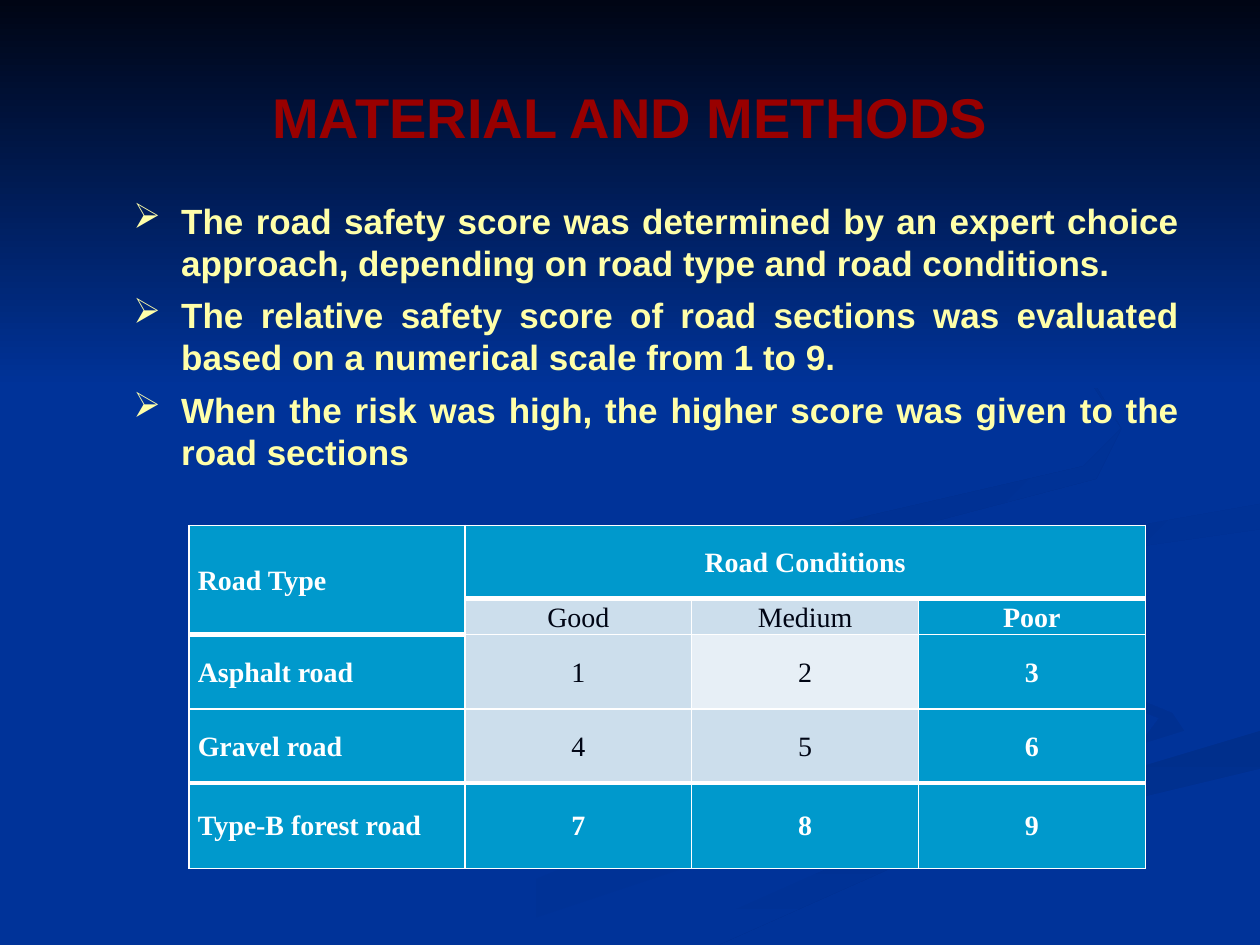
import pptx
import pptx.dml.color
import pptx.enum.shapes
import pptx.enum.text
import pptx.oxml
import pptx.oxml.ns
import pptx.util

COLORS = {
    "blue": "003399", "navy": "003091", "deep": "002F8C", "ink": "000514",
    "red": "990000", "cream": "FFFFA9", "white": "FFFFFF",
    "cyan": "0099CC", "pale": "CCDEEC", "paler": "E7EFF6",
}
CELL = pptx.util.Inches(0.1)
ALIGN = pptx.enum.text.PP_ALIGN
MIDDLE = pptx.enum.text.MSO_ANCHOR.MIDDLE

SWOOSHES = [
    ("blue", "navy", 0, "78,55 61,50 57,46 59,49 77,55 78,58 54,65 30,75 36,75 78,61 80,58"),
    ("blue", "navy", 45, "94,57 77,50 72,46 77,51 92,57 89,61 94,58"),
    ("deep", "blue", 90, "50,75 57,75 75,67 100,61 100,58 76,65"),
    ("blue", "blue", 0, "73,46 76,50 92,55 94,58 62,68 48,75 52,75 70,67 100,58 "
                        "100,54 82,49 78,46 83,43 100,40 100,39 77,43"),
    ("navy", "blue", 45, "78,46 83,50 81,47 86,44 100,42 100,40 83,43"),
    ("deep", "blue", 45, "68,43 87,38 89,34 86,29 76,23 85,28 89,34 86,37 60,43 58,46 62,50 60,46"),
]
BULLETS = [
    "The road safety score was determined by an expert choice approach, "
    "depending on road type and road conditions.",
    "The relative safety score of road sections was evaluated based on a "
    "numerical scale from 1 to 9.",
    "When the risk was high, the higher score was given to the road sections",
]
COLUMNS = [21.9] + [18] * 3
ROWS = [5.8, 2.8, 5.9, 5.9, 6.8]
TABLE = [
    ["Road Type", "Road Conditions", "", ""],
    ["", "Good", "Medium", "Poor"],
    ["Asphalt road", "1", "2", "3"],
    ["Gravel road", "4", "5", "6"],
    ["Type-B forest road", "7", "8", "9"],
]


def rgb(name):
    """Return the named colour."""
    return pptx.dml.color.RGBColor.from_string(COLORS[name])


def grid(*values):
    """Turn grid steps into slide lengths."""
    return [round(v * CELL) for v in values]


def fill_gradient(sp, first, last, angle):
    """Give a shape a two-colour gradient without outline or shadow."""
    sp.shadow.inherit = False
    sp.line.fill.background()
    sp.fill.gradient()
    sp.fill.gradient_angle = -angle % 360
    for stop, name, position in zip(sp.fill.gradient_stops, (first, last), (0, 1)):
        stop.color.rgb = rgb(name)
        stop.position = position


def add_swoosh(s, first, last, angle, outline):
    """Add a background ribbon from its outline in grid steps."""
    points = [tuple(map(int, pair.split(","))) for pair in outline.split()]
    fb = s.shapes.build_freeform(*points[0], scale=CELL)
    fb.add_line_segments(points[1:], close=True)
    fill_gradient(fb.convert_to_shape(), first, last, angle)


def add_sky(s):
    """Add the dark band fading down from the top."""
    kind = pptx.enum.shapes.MSO_SHAPE.RECTANGLE
    sp = s.shapes.add_shape(kind, *grid(0, 0, 100, 30.8))
    fill_gradient(sp, "ink", "blue", 90)


def add_run(p, text, font, size, color, bold=True):
    """Add one formatted run to a paragraph."""
    r = p.add_run()
    r.text = text
    r.font.name, r.font.size, r.font.bold = font, pptx.util.Pt(size), bold
    r.font.color.rgb = rgb(color)


def add_box(s, *place):
    """Add a wrapping, middle-anchored text box and return its frame."""
    tf = s.shapes.add_textbox(*grid(*place)).text_frame
    tf.word_wrap = True
    tf.vertical_anchor = MIDDLE
    return tf


def add_title(s, text):
    """Add the centred heading."""
    p = add_box(s, 5, 3, 90, 12.5).paragraphs[0]
    p.alignment = ALIGN.CENTER
    add_run(p, text, "Arial", 32, "red")


def add_bullets(s, texts):
    """Add the justified list with arrow bullets."""
    tf = add_box(s, 9.6, 15.2, 85, 22.9)
    for i, text in enumerate(texts):
        p = tf.add_paragraph() if i else tf.paragraphs[0]
        p.alignment = ALIGN.JUSTIFY
        p.space_after = pptx.util.Pt(6)
        pPr = p._p.get_or_add_pPr()
        indent = grid(3.8)[0]
        pPr.set("marL", str(indent))
        pPr.set("indent", str(-indent))
        bullet = pptx.oxml.ns.qn("a:buChar")
        pPr.append(pPr.makeelement(bullet, {"char": "➢"}))
        add_run(p, text, "Arial", 20, "cream")


def set_border(cell, side, width):
    """Draw one white cell edge."""
    ns = pptx.oxml.ns.nsdecls("a")
    cell._tc.get_or_add_tcPr().append(pptx.oxml.parse_xml(
        f'<a:ln{side} {ns} w="{pptx.util.Pt(width)}"><a:solidFill>'
        f'<a:srgbClr val="{COLORS["white"]}"/></a:solidFill></a:ln{side}>'))


def is_heavy_below(row, col):
    """Tell whether the edge under a cell is thick."""
    return row in (0, 3) or (row, col) == (1, 0)


def fill_cell(cell, row, col, text):
    """Format one table cell and write its text."""
    plain = row in (1, 2, 3) and col in (1, 2)
    widths = {"L": 1, "R": 1,
              "T": 3 if is_heavy_below(row - 1, col) else 1,
              "B": 3 if is_heavy_below(row, col) else 1}
    for side, width in widths.items():
        set_border(cell, side, width)
    cell.fill.solid()
    shade = "paler" if (row, col) == (2, 2) else "pale"
    cell.fill.fore_color.rgb = rgb(shade if plain else "cyan")
    cell.vertical_anchor = MIDDLE
    cell.margin_left = cell.margin_right = grid(0.7)[0]
    cell.margin_top = cell.margin_bottom = 0
    if text:
        p = cell.text_frame.paragraphs[0]
        p.alignment = ALIGN.CENTER if col else ALIGN.LEFT
        p.line_spacing = 1.07 if row < 4 else 1.0
        add_run(p, text, "Times New Roman", 16, "ink" if plain else "white", not plain)


def add_scores(s):
    """Add the table of scores by road type and condition."""
    place = grid(15, 41.7, sum(COLUMNS), sum(ROWS))
    table = s.shapes.add_table(len(ROWS), len(COLUMNS), *place).table
    for column, width in zip(table.columns, grid(*COLUMNS)):
        column.width = width
    for row, height in zip(table.rows, grid(*ROWS)):
        row.height = height
    table.cell(0, 0).merge(table.cell(1, 0))
    table.cell(0, 1).merge(table.cell(0, 3))
    for i, texts in enumerate(TABLE):
        for j, text in enumerate(texts):
            fill_cell(table.cell(i, j), i, j, text)


def main():
    """Build the slide and save it."""
    prs = pptx.Presentation()
    prs.slide_width, prs.slide_height = grid(100, 75)
    s = prs.slides.add_slide(prs.slide_layouts[6])
    s.background.fill.solid()
    s.background.fill.fore_color.rgb = rgb("blue")
    for swoosh in SWOOSHES:
        add_swoosh(s, *swoosh)
    add_sky(s)
    add_title(s, "MATERIAL AND METHODS")
    add_bullets(s, BULLETS)
    add_scores(s)
    prs.save("out.pptx")


if __name__ == "__main__":
    main()
